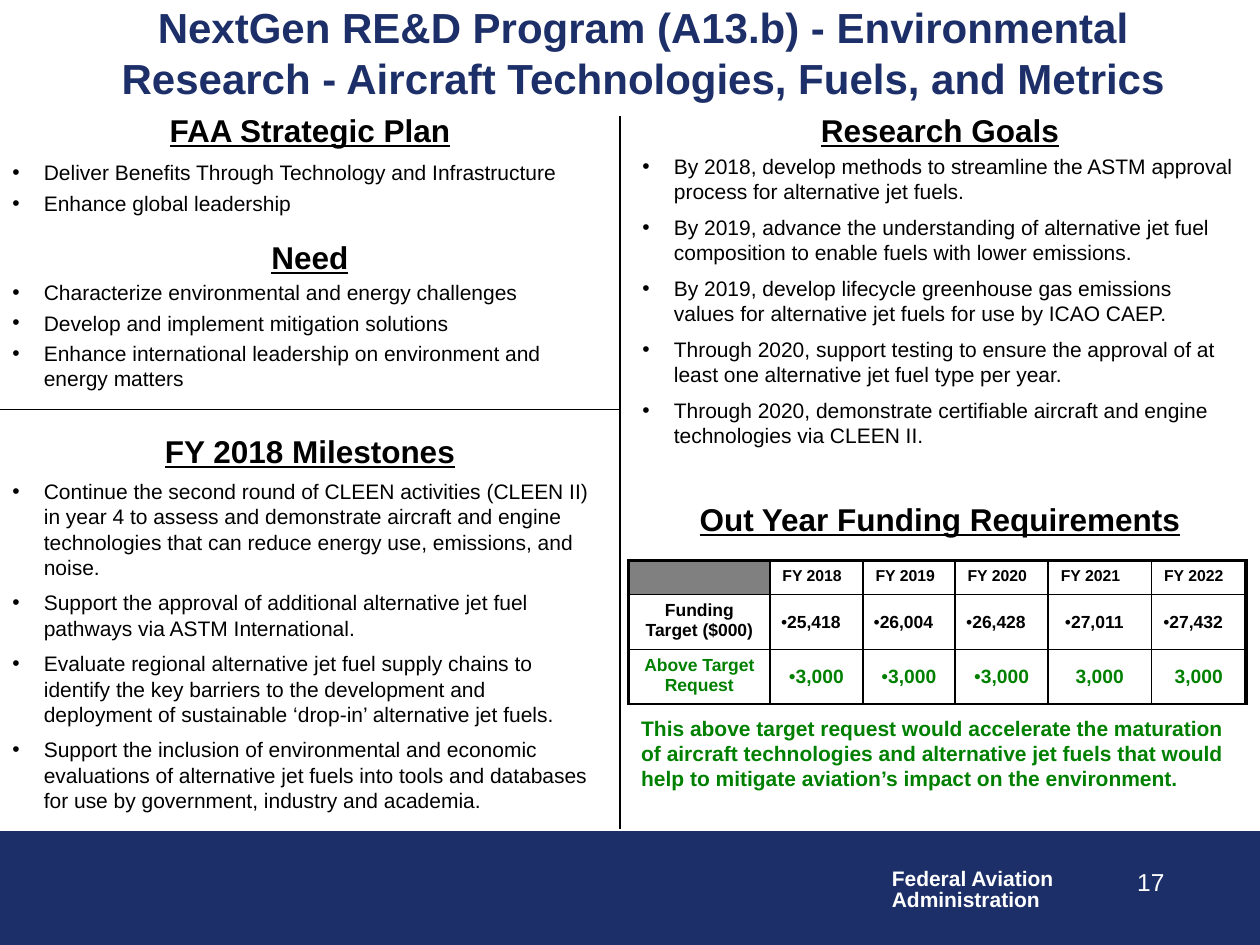
from dataclasses import dataclass

from lxml import etree
from pptx import Presentation
from pptx.dml.color import RGBColor
from pptx.enum.shapes import MSO_CONNECTOR, MSO_SHAPE
from pptx.enum.text import MSO_ANCHOR, PP_ALIGN
from pptx.oxml.ns import qn
from pptx.util import Inches, Pt

LEFT, CENTER, RIGHT = PP_ALIGN.LEFT, PP_ALIGN.CENTER, PP_ALIGN.RIGHT
TOP, MIDDLE = MSO_ANCHOR.TOP, MSO_ANCHOR.MIDDLE
STRAIGHT, RECTANGLE = MSO_CONNECTOR.STRAIGHT, MSO_SHAPE.RECTANGLE

NAVY, BLACK, WHITE, GREEN, GRAY = "1D2F68", "000000", "FFFFFF", "008000", "808080"
DIVIDER_X = 4.92
BODY_WIDTH = 4.83
BULLET_INDENT = 0.25
THIN, THICK = 1, 2.25


@dataclass(frozen=True)
class Style:
    """Describes how a block of text looks."""
    size: float
    color: str = BLACK
    bold: bool = False
    underline: bool = False
    align: PP_ALIGN = LEFT
    gap: float = 0
    bullet: bool = False
    indent: float = 0
    line_spacing: float = 1


@dataclass(frozen=True)
class TextBlock:
    """Holds a text box: its place, paragraphs and style."""
    left: float
    top: float
    width: float
    height: float
    lines: tuple
    style: Style
    anchor: MSO_ANCHOR = TOP
    wrap: bool = True


HEADING = Style(18, bold=True, underline=True, align=CENTER)
TIGHT_LIST = Style(12, gap=3, bullet=True, indent=BULLET_INDENT)
OPEN_LIST = Style(12, gap=6, bullet=True, indent=BULLET_INDENT)

TEXT_BLOCKS = (
    TextBlock(0.47, 0.08, 9.27, 0.67, (
        "NextGen RE&D Program (A13.b) - Environmental Research - "
        "Aircraft Technologies, Fuels, and Metrics",
    ), Style(24, NAVY, bold=True, align=CENTER), MIDDLE),
    TextBlock(0, 0.83, DIVIDER_X, 0.33, ("FAA Strategic Plan",), HEADING),
    TextBlock(0, 1.22, BODY_WIDTH, 0.55, (
        "Deliver Benefits Through Technology and Infrastructure",
        "Enhance global leadership",
    ), TIGHT_LIST),
    TextBlock(0, 1.84, DIVIDER_X, 0.33, ("Need",), HEADING),
    TextBlock(0, 2.17, BODY_WIDTH, 0.99, (
        "Characterize environmental and energy challenges",
        "Develop and implement mitigation solutions",
        "Enhance international leadership on environment and energy matters",
    ), TIGHT_LIST),
    TextBlock(0, 3.38, DIVIDER_X, 0.38, ("FY 2018 Milestones",), HEADING),
    TextBlock(0, 3.75, BODY_WIDTH, 2.83, (
        "Continue the second round of CLEEN activities (CLEEN II) in year 4 to assess and "
        "demonstrate aircraft and engine technologies that can reduce energy use, emissions, "
        "and noise.",
        "Support the approval of additional alternative jet fuel pathways via ASTM International.",
        "Evaluate regional alternative jet fuel supply chains to identify the key barriers to the "
        "development and deployment of sustainable ‘drop-in’ alternative jet fuels.",
        "Support the inclusion of environmental and economic evaluations of alternative jet fuels "
        "into tools and databases for use by government, industry and academia.",
    ), OPEN_LIST),
    TextBlock(DIVIDER_X, 0.83, 5.08, 0.33, ("Research Goals",), HEADING),
    TextBlock(5, 1.17, 4.92, 2.52, (
        "By 2018, develop methods to streamline the ASTM approval process for alternative "
        "jet fuels.",
        "By 2019, advance the understanding of alternative jet fuel composition to enable fuels "
        "with lower emissions.",
        "By 2019, develop lifecycle greenhouse gas emissions values for alternative jet fuels for "
        "use by ICAO CAEP.",
        "Through 2020, support testing to ensure the approval of at least one alternative jet fuel "
        "type per year.",
        "Through 2020, demonstrate certifiable aircraft and engine technologies via CLEEN II.",
    ), OPEN_LIST),
    TextBlock(4.92, 3.92, 5.08, 0.54, ("Out Year Funding Requirements",), HEADING),
    TextBlock(4.99, 5.63, 4.92, 0.71, (
        "This above target request would accelerate the maturation of aircraft technologies and "
        "alternative jet fuels that would help to mitigate aviation’s impact on the environment.",
    ), Style(12, GREEN, bold=True)),
    TextBlock(6.98, 6.85, 1.5, 0.44, ("Federal Aviation", "Administration"),
              Style(12, WHITE, bold=True, line_spacing=0.85), wrap=False),
    TextBlock(7.26, 6.83, 2.08, 0.5, ("17",), Style(14, WHITE, align=RIGHT)),
)

COLUMN_WIDTHS = (1.12, 0.74, 0.73, 0.74, 0.82, 0.75)
ROW_HEIGHTS = (0.27, 0.43, 0.43)
FUNDING_ROWS = (
    ("", "FY 2018", "FY 2019", "FY 2020", "FY 2021", "FY 2022"),
    ("Funding Target ($000)", "25,418", "26,004", "26,428", "27,011", "27,432"),
    ("Above Target Request",) + ("3,000",) * 5,
)
BULLETED_REQUESTS = 3


def color_of(hex_value: str) -> RGBColor:
    """Turn a hex string into a colour."""
    return RGBColor.from_string(hex_value)


def write_text(frame, lines: tuple, style: Style) -> None:
    """Fill a text frame with one paragraph per line."""
    font_format = {"name": "Arial", "size": Pt(style.size), "bold": style.bold,
                   "underline": style.underline}
    for index, line in enumerate(lines):
        paragraph = frame.add_paragraph() if index else frame.paragraphs[0]
        paragraph_format = {"alignment": style.align, "line_spacing": style.line_spacing,
                            "space_before": Pt(style.gap if index else 0)}
        for name, value in paragraph_format.items():
            setattr(paragraph, name, value)
        if style.bullet:
            properties = paragraph._p.get_or_add_pPr()
            properties.set("marL", str(Inches(style.indent)))
            properties.set("indent", str(-Inches(style.indent)))
            etree.SubElement(properties, qn("a:buFont"), typeface="Arial")
            etree.SubElement(properties, qn("a:buChar"), char="•")
        if not line:
            etree.SubElement(paragraph._p, qn("a:endParaRPr"), sz=str(int(style.size * 100)))
            continue
        run = paragraph.add_run()
        run.text = line
        for name, value in font_format.items():
            setattr(run.font, name, value)
        run.font.color.rgb = color_of(style.color)


def add_text(slide, block: TextBlock) -> None:
    """Add a text box."""
    box = slide.shapes.add_textbox(*map(Inches, (block.left, block.top, block.width, block.height)))
    box.text_frame.word_wrap = block.wrap
    box.text_frame.vertical_anchor = block.anchor
    write_text(box.text_frame, block.lines, block.style)


def add_line(slide, start: tuple, end: tuple) -> None:
    """Add a thin black dividing line."""
    line = slide.shapes.add_connector(STRAIGHT, *map(Inches, start + end))
    line.line.color.rgb = color_of(BLACK)
    line.line.width = Pt(0.75)
    etree.SubElement(line._element.spPr, qn("a:effectLst"))


def set_borders(cell, widths: dict) -> None:
    """Draw the borders of a cell, given widths in points by side."""
    properties = cell._tc.get_or_add_tcPr()
    for index, side in enumerate("LRTB"):
        border = etree.Element(qn(f"a:ln{side}"), w=str(Pt(widths[side])))
        fill = etree.SubElement(border, qn("a:solidFill"))
        etree.SubElement(fill, qn("a:srgbClr"), val=BLACK)
        properties.insert(index, border)


def cell_style(row: int, column: int) -> Style:
    """Choose the text style for a funding cell."""
    if row == 0:
        return Style(9, bold=True)
    if column == 0:
        return Style(10, GREEN if row == 2 else BLACK, bold=True, align=CENTER)
    if row == 1:
        return Style(10, bold=True, align=CENTER, bullet=True)
    return Style(11, GREEN, bold=True, align=CENTER, bullet=column <= BULLETED_REQUESTS)


def add_funding_table(slide) -> None:
    """Add the table of funding by fiscal year."""
    place = (4.99, 4.45, sum(COLUMN_WIDTHS), sum(ROW_HEIGHTS))
    table = slide.shapes.add_table(len(ROW_HEIGHTS), len(COLUMN_WIDTHS), *map(Inches, place)).table
    for column, width in zip(table.columns, COLUMN_WIDTHS):
        column.width = Inches(width)
    for row, height in zip(table.rows, ROW_HEIGHTS):
        row.height = Inches(height)
    last_column = len(COLUMN_WIDTHS) - 1
    for row, values in enumerate(FUNDING_ROWS):
        for column, value in enumerate(values):
            cell = table.cell(row, column)
            is_amount = row > 0 and column > 0
            margins = (0, 0, 0.09, 0) if is_amount and row == 1 else (0.1, 0.05, 0.1, 0.05)
            for side, margin in zip(("left", "top", "right", "bottom"), margins):
                setattr(cell, f"margin_{side}", Inches(margin))
            cell.vertical_anchor = MIDDLE if is_amount else TOP
            write_text(cell.text_frame, (value,), cell_style(row, column))
            cell.fill.solid()
            cell.fill.fore_color.rgb = color_of(WHITE if value else GRAY)
            set_borders(cell, {"L": THIN if column else THICK,
                               "R": THICK if column == last_column else THIN,
                               "T": THIN if row else THICK, "B": THIN})


def main() -> None:
    """Build and save the slide."""
    presentation = Presentation()
    presentation.slide_width, presentation.slide_height = Inches(10), Inches(7.5)
    slide = presentation.slides.add_slide(presentation.slide_layouts[6])
    footer = slide.shapes.add_shape(RECTANGLE, *map(Inches, (0, 6.6, 10, 0.9)))
    footer.shadow.inherit = False
    footer.fill.solid()
    footer.fill.fore_color.rgb = footer.line.color.rgb = color_of(NAVY)
    footer.line.width = Pt(0.75)
    add_line(slide, (DIVIDER_X, 0.92), (DIVIDER_X, 6.58))
    add_line(slide, (0, 3.25), (DIVIDER_X, 3.25))
    for block in TEXT_BLOCKS:
        add_text(slide, block)
    add_funding_table(slide)
    presentation.save("out.pptx")


if __name__ == "__main__":
    main()
